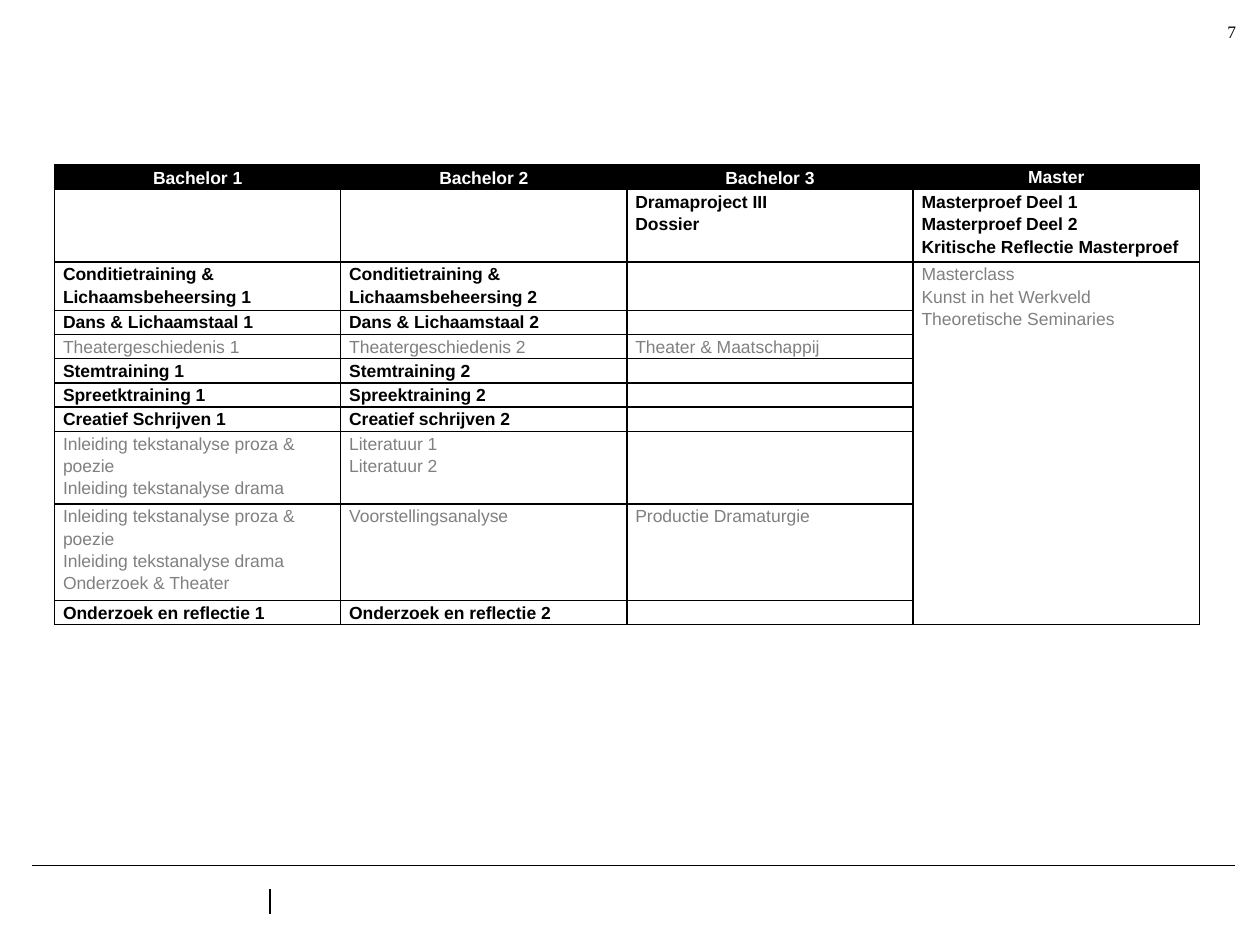
from lxml import etree
from pptx import Presentation
from pptx.dml.color import RGBColor
from pptx.enum.shapes import MSO_CONNECTOR
from pptx.enum.text import MSO_ANCHOR, PP_ALIGN
from pptx.oxml.ns import qn
from pptx.util import Cm, Pt

COLORS = {"black": "000000", "white": "FFFFFF", "grey": "808080"}

HEADS = ["Bachelor 1", "Bachelor 2", "Bachelor 3", "Master"]
INTRO = ["Inleiding tekstanalyse proza & poezie", "Inleiding tekstanalyse drama"]
# Height in text lines, colour, and the paragraphs of each cell
ROWS = [
    (3, "black", [[], [], ["Dramaproject III", "Dossier"],
                  ["Masterproef Deel 1", "Masterproef Deel 2",
                   "Kritische Reflectie Masterproef"]]),
    (2, "black", [["Conditietraining & Lichaamsbeheersing 1"],
                  ["Conditietraining & Lichaamsbeheersing 2"], []]),
    (1, "black", [["Dans & Lichaamstaal 1"], ["Dans & Lichaamstaal 2"], []]),
    (1, "grey", [["Theatergeschiedenis 1"], ["Theatergeschiedenis 2"],
                 ["Theater & Maatschappij"]]),
    (1, "black", [["Stemtraining 1"], ["Stemtraining 2"], []]),
    (1, "black", [["Spreetktraining 1"], ["Spreektraining 2"], []]),
    (1, "black", [["Creatief Schrijven 1"], ["Creatief schrijven 2"], []]),
    (3, "grey", [INTRO, ["Literatuur 1", "Literatuur 2"], []]),
    (4, "grey", [INTRO + ["Onderzoek & Theater"], ["Voorstellingsanalyse"],
                 ["Productie Dramaturgie"]]),
    (1, "black", [["Onderzoek en reflectie 1"], ["Onderzoek en reflectie 2"], []]),
]
MASTER = ["Masterclass", "Kunst in het Werkveld", "Theoretische Seminaries"]

LEFT, TOP, COL, LINE = 1.1, 3.33, 5.77, 0.47
RULES = [(0.65, 17.45, 24.9, 17.45, 0.75), (5.44, 18.42, 5.44, 17.93, 0.75)]


def rgb(name):
    return RGBColor.from_string(COLORS[name])


def add_run(para, text, font, color, bold=False):
    run = para.add_run()
    run.text = text
    run.font.name, run.font.size, run.font.bold = font, Pt(10), bold
    run.font.color.rgb = rgb(color)


def frame(cell):
    """Draw a black border on all four sides of a cell."""
    props = cell._tc.get_or_add_tcPr()
    for place, side in enumerate(("lnL", "lnR", "lnT", "lnB")):
        line = etree.Element(qn(f"a:{side}"), w=str(Pt(1)))
        fill = etree.SubElement(line, qn("a:solidFill"))
        etree.SubElement(fill, qn("a:srgbClr"), val=COLORS["black"])
        props.insert(place, line)


def write(cell, lines, color, align=PP_ALIGN.LEFT):
    """Put one paragraph per line; an empty cell keeps the small text size."""
    body = cell.text_frame
    for i, text in enumerate(lines):
        para = body.add_paragraph() if i else body.paragraphs[0]
        para.alignment, para.line_spacing = align, 1.15
        add_run(para, text, "Arial", color, color != "grey")
    if not lines:
        etree.SubElement(body.paragraphs[0]._p, qn("a:endParaRPr"), sz="1000")


def add_plan(slide):
    heights = [1] + [row[0] for row in ROWS]
    table = slide.shapes.add_table(
        len(heights), len(HEADS), Cm(LEFT), Cm(TOP),
        Cm(COL * len(HEADS)), Cm(LINE * sum(heights))).table
    for col in table.columns:
        col.width = Cm(COL)
    for row, count in zip(table.rows, heights):
        row.height = Cm(LINE * count)
    for cell in table.iter_cells():
        cell.margin_left = cell.margin_right = Cm(0.17)
        cell.margin_top = cell.margin_bottom = 0
        cell.fill.background()
        frame(cell)
    for c, head in enumerate(HEADS):
        cell = table.cell(0, c)
        cell.fill.solid()
        cell.fill.fore_color.rgb = rgb("black")
        if head != "Master":
            cell.vertical_anchor = MSO_ANCHOR.MIDDLE
        write(cell, [head], "white", PP_ALIGN.CENTER)
    for r, (_, color, cells) in enumerate(ROWS, 1):
        for c, lines in enumerate(cells):
            write(table.cell(r, c), lines, color)
    tall = table.cell(2, 3)
    tall.merge(table.cell(len(ROWS), 3))
    write(tall, MASTER, "grey")


def add_rule(slide, x1, y1, x2, y2, width):
    rule = slide.shapes.add_connector(
        MSO_CONNECTOR.STRAIGHT, Cm(x1), Cm(y1), Cm(x2), Cm(y2))
    rule.line.color.rgb = rgb("black")
    rule.line.width = Pt(width)
    etree.SubElement(rule._element.spPr, qn("a:effectLst"))


def add_number(slide, text):
    body = slide.shapes.add_textbox(Cm(23.42), Cm(0.43), Cm(1.5), Cm(0.41)).text_frame
    body.word_wrap = True
    body.margin_left = body.margin_right = body.margin_top = body.margin_bottom = 0
    body.vertical_anchor = MSO_ANCHOR.MIDDLE
    para = body.paragraphs[0]
    para.alignment, para.line_spacing = PP_ALIGN.RIGHT, Pt(12)
    add_run(para, text, "Times New Roman", "black")


def main():
    deck = Presentation()
    deck.slide_width, deck.slide_height = Cm(25.4), Cm(19.05)
    slide = deck.slides.add_slide(deck.slide_layouts[6])
    for rule in RULES:
        add_rule(slide, *rule)
    add_number(slide, "7")
    add_plan(slide)
    deck.save("out.pptx")


if __name__ == "__main__":
    main()
